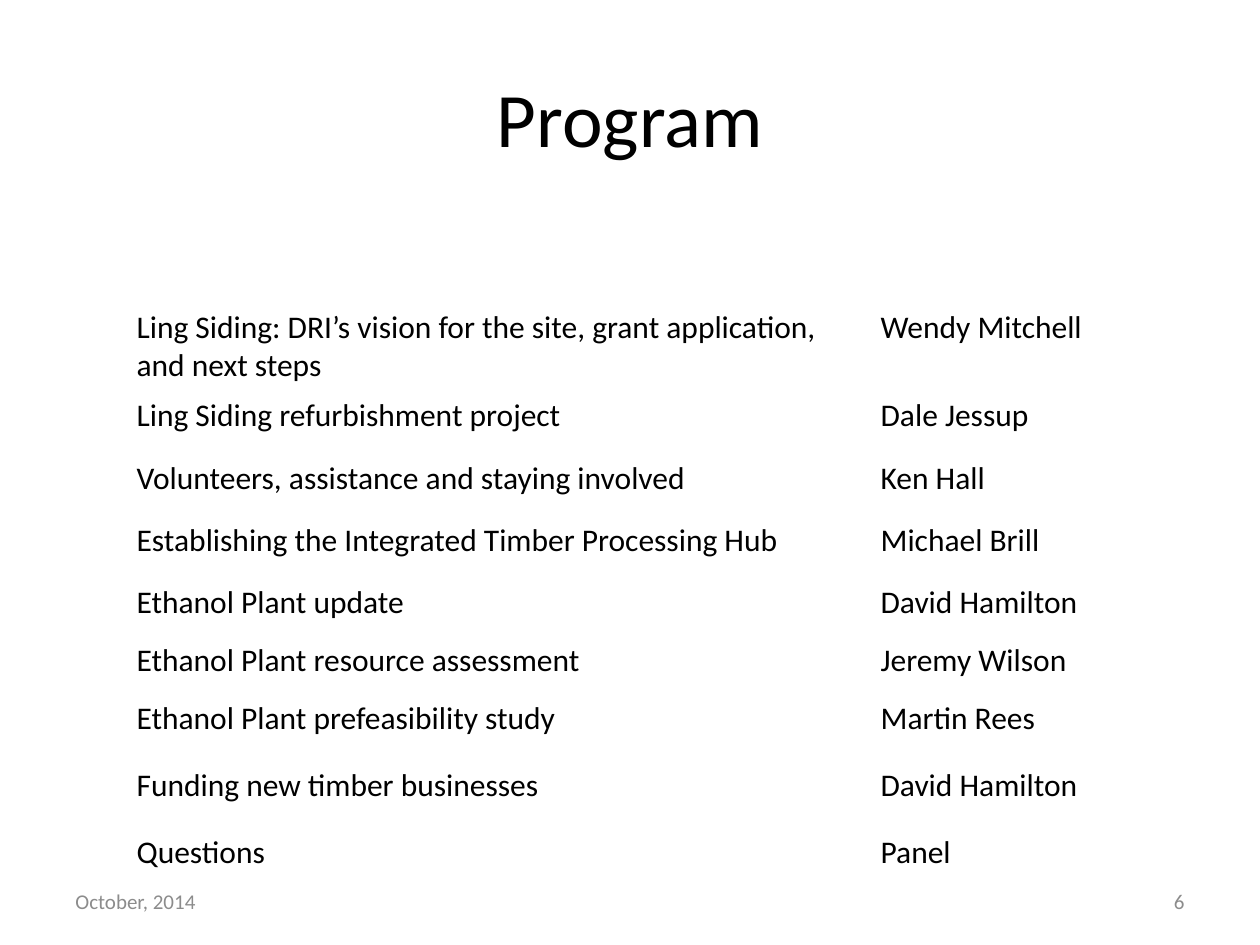
from lxml import etree
from pptx import Presentation
from pptx.dml.color import RGBColor
from pptx.enum.text import MSO_ANCHOR, PP_ALIGN
from pptx.oxml.ns import qn
from pptx.util import Pt

LEFT, CENTER, RIGHT = PP_ALIGN.LEFT, PP_ALIGN.CENTER, PP_ALIGN.RIGHT
MIDDLE = MSO_ANCHOR.MIDDLE
EMU_PER_PX = 914400 / 126

THEME = {
    "title": {"name": "Calibri", "size": Pt(44), "color": "000000"},
    "body": {"name": "Calibri", "size": Pt(18), "color": "000000"},
    "footer": {"name": "Calibri", "size": Pt(12), "color": "8C8C8C"},
}


def px(length):
    return round(length * EMU_PER_PX)


def write(frame, text, role, align=LEFT):
    paragraph = frame.paragraphs[0]
    paragraph.alignment = align
    run = paragraph.add_run()
    run.text = text
    for key, value in THEME[role].items():
        if key == "color":
            run.font.color.rgb = RGBColor.from_string(value)
        else:
            setattr(run.font, key, value)


deck = Presentation()
deck.slide_width, deck.slide_height = px(1260), px(945)
slide = deck.slides.add_slide(deck.slide_layouts[6])

# Title, date and page number
for text, role, align, bounds in [
    ("Program", "title", CENTER, (63, 38, 1134, 158)),
    ("October, 2014", "footer", LEFT, (63, 876, 294, 50)),
    ("6", "footer", RIGHT, (903, 876, 294, 50)),
]:
    frame = slide.shapes.add_textbox(*map(px, bounds)).text_frame
    frame.word_wrap = True
    frame.vertical_anchor = MIDDLE
    write(frame, text, role, align)

# Program of talks and speakers, below an empty heading row
program = [
    (58, "", ""),
    (86, "Ling Siding: DRI’s vision for the site, grant application, and next steps",
     "Wendy Mitchell"),
    (63, "Ling Siding refurbishment project", "Dale Jessup"),
    (62, "Volunteers, assistance and staying involved", "Ken Hall"),
    (62, "Establishing the Integrated Timber Processing Hub", "Michael Brill"),
    (58, "Ethanol Plant update", "David Hamilton"),
    (58, "Ethanol Plant resource assessment", "Jeremy Wilson"),
    (67, "Ethanol Plant prefeasibility study", "Martin Rees"),
    (67, "Funding new timber businesses", "David Hamilton"),
    (79, "Questions", "Panel"),
]
column_widths = (744, 327)
table_height = sum(height for height, *_ in program)
schedule = slide.shapes.add_table(
    len(program), len(column_widths),
    px(124), px(244), px(sum(column_widths)), px(table_height),
).table
schedule.first_row = schedule.horz_banding = False
for column, width in zip(schedule.columns, column_widths):
    column.width = px(width)
for row, (height, *entries) in zip(schedule.rows, program):
    row.height = px(height)
    for cell, entry in zip(row.cells, entries):
        # Clear borders and fill, so the footer stays visible under the table
        properties = cell._tc.get_or_add_tcPr()
        for edge in ("a:lnL", "a:lnR", "a:lnT", "a:lnB"):
            border = etree.SubElement(properties, qn(edge), w="0")
            etree.SubElement(border, qn("a:noFill"))
        cell.fill.background()
        if entry:
            write(cell.text_frame, entry, "body")

deck.save("out.pptx")
